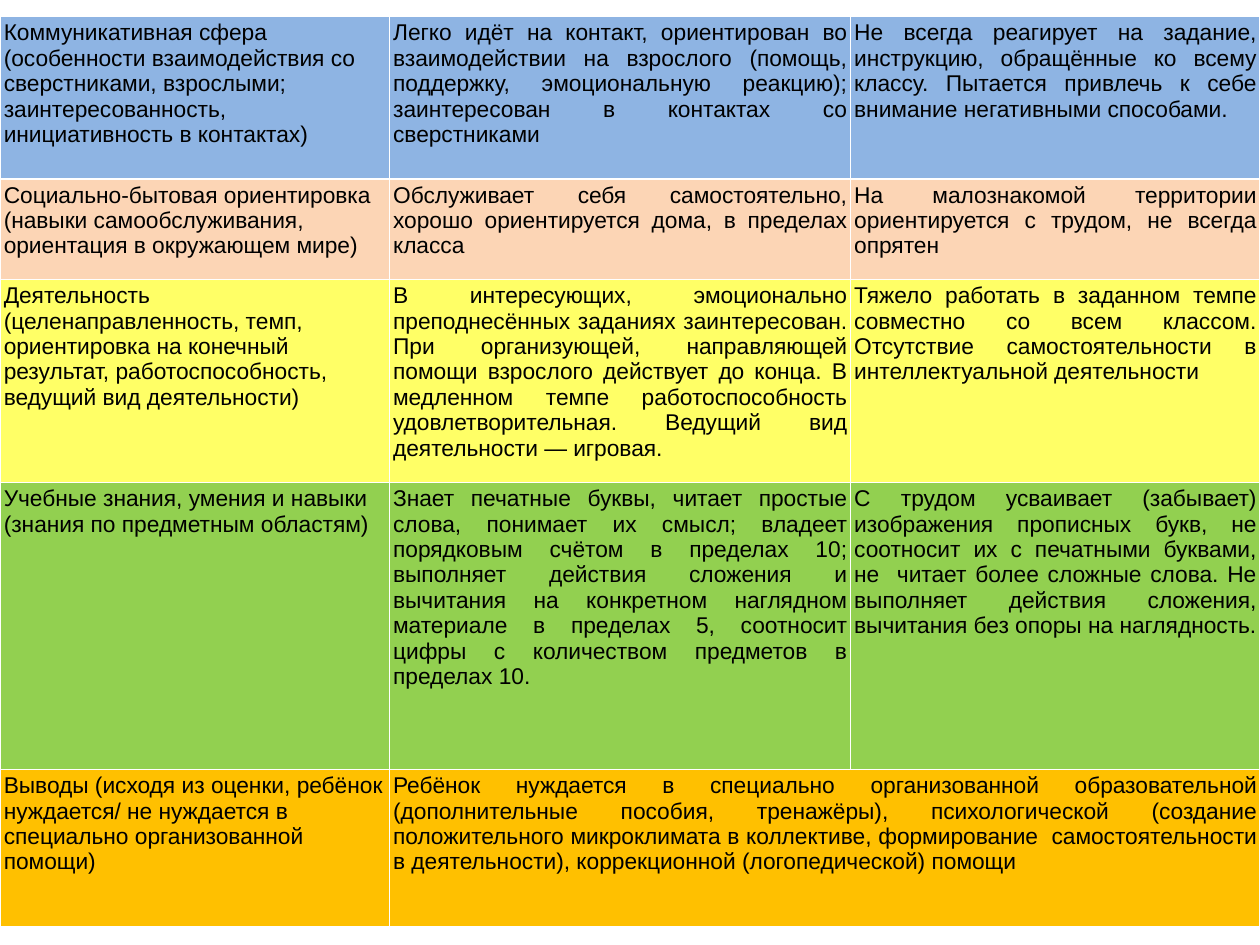
"""Build a slide with a table that assesses a pupil's development by area."""
from dataclasses import dataclass

import lxml.etree
import pptx
import pptx.dml.color
import pptx.enum.text
import pptx.oxml.ns
import pptx.util

Pt = pptx.util.Pt
RGBColor = pptx.dml.color.RGBColor
Align = pptx.enum.text.PP_ALIGN

BLACK = RGBColor(0x00, 0x00, 0x00)
WHITE = RGBColor(0xFF, 0xFF, 0xFF)
BLUE = RGBColor(0x8E, 0xB4, 0xE3)
PEACH = RGBColor(0xFC, 0xD5, 0xB5)
YELLOW = RGBColor(0xFF, 0xFF, 0x66)
GREEN = RGBColor(0x92, 0xD0, 0x50)
ORANGE = RGBColor(0xFF, 0xC0, 0x00)

PAGE_WIDTH, PAGE_HEIGHT = 720, 540
TABLE_TOP = 9.4
COLUMN_WIDTHS = (222.5, 263.5, 234)
CELL_MARGIN = 2.16
FONT_NAME, FONT_SIZE = "Arial", 13
BORDER_WIDTH = 1


@dataclass(frozen=True)
class Area:
    height: float
    fill: RGBColor
    texts: tuple[str, ...]


AREAS = (
    Area(92.8, BLUE, (
        "Коммуникативная сфера (особенности взаимодействия со сверстниками, взрослыми; "
        "заинтересованность, инициативность в контактах)",
        "Легко идёт на контакт, ориентирован во взаимодействии на взрослого (помощь, поддержку, "
        "эмоциональную реакцию); заинтересован в контактах со сверстниками",
        "Не всегда реагирует на задание, инструкцию, обращённые ко всему классу. "
        "Пытается привлечь к себе внимание негативными способами.",
    )),
    Area(57.5, PEACH, (
        "Социально-бытовая ориентировка (навыки самообслуживания, ориентация в окружающем мире)",
        "Обслуживает себя самостоятельно, хорошо ориентируется дома, в пределах класса",
        "На малознакомой территории ориентируется с трудом, не всегда опрятен",
    )),
    Area(116, YELLOW, (
        "Деятельность (целенаправленность, темп, ориентировка на конечный результат, "
        "работоспособность, ведущий вид деятельности)",
        "В интересующих, эмоционально преподнесённых заданиях заинтересован. "
        "При организующей, направляющей помощи взрослого действует до конца. "
        "В медленном темпе работоспособность удовлетворительная. "
        "Ведущий вид деятельности — игровая.",
        "Тяжело работать в заданном темпе совместно со всем классом. "
        "Отсутствие самостоятельности в интеллектуальной деятельности",
    )),
    Area(164, GREEN, (
        "Учебные знания, умения и навыки (знания по предметным областям)",
        "Знает печатные буквы, читает простые слова, понимает их смысл; владеет порядковым счётом "
        "в пределах 10; выполняет действия сложения и вычитания на конкретном наглядном материале "
        "в пределах 5, соотносит цифры с количеством предметов в пределах 10.",
        "С трудом усваивает (забывает) изображения прописных букв, не соотносит их с печатными "
        "буквами, не  читает более сложные слова. Не выполняет действия сложения, "
        "вычитания без опоры на наглядность.",
    )),
    Area(90, ORANGE, (
        "Выводы (исходя из оценки, ребёнок нуждается/ не нуждается в специально "
        "организованной помощи)",
        "Ребёнок нуждается в специально организованной образовательной (дополнительные пособия, "
        "тренажёры), психологической (создание положительного микроклимата в коллективе, "
        "формирование  самостоятельности в деятельности), коррекционной (логопедической) помощи",
    )),
)


def set_borders(cell, color: RGBColor) -> None:
    properties = cell._tc.get_or_add_tcPr()
    for position, side in enumerate(("lnL", "lnR", "lnT", "lnB")):
        line = lxml.etree.Element(pptx.oxml.ns.qn(f"a:{side}"), w=str(Pt(BORDER_WIDTH)))
        fill = lxml.etree.SubElement(line, pptx.oxml.ns.qn("a:solidFill"))
        lxml.etree.SubElement(fill, pptx.oxml.ns.qn("a:srgbClr"), val=str(color))
        properties.insert(position, line)


def style_cell(cell, fill: RGBColor) -> None:
    cell.margin_left = cell.margin_right = Pt(CELL_MARGIN)
    cell.margin_top = cell.margin_bottom = Pt(CELL_MARGIN)
    cell.fill.solid()
    cell.fill.fore_color.rgb = fill
    set_borders(cell, WHITE)


def write_text(cell, text: str, alignment: Align) -> None:
    para = cell.text_frame.paragraphs[0]
    para.alignment = alignment
    span = para.add_run()
    span.text = text
    span.font.name = FONT_NAME
    span.font.size = Pt(FONT_SIZE)
    span.font.bold = False
    span.font.color.rgb = BLACK


def fill_row(table, index: int, area: Area) -> None:
    table.rows[index].height = Pt(area.height)
    last_column = len(COLUMN_WIDTHS) - 1
    for column in range(len(COLUMN_WIDTHS)):
        style_cell(table.cell(index, column), area.fill)
    for column, text in enumerate(area.texts):
        write_text(table.cell(index, column), text, Align.JUSTIFY if column else Align.LEFT)
    last_text = len(area.texts) - 1
    if last_text < last_column:
        table.cell(index, last_text).merge(table.cell(index, last_column))


def add_assessment_table(page) -> None:
    frame = page.shapes.add_table(
        len(AREAS), len(COLUMN_WIDTHS), Pt(0), Pt(TABLE_TOP),
        Pt(sum(COLUMN_WIDTHS)), Pt(sum(area.height for area in AREAS)),
    )
    table = frame.table
    table.first_row = table.horz_banding = False
    for column, width in zip(table.columns, COLUMN_WIDTHS):
        column.width = Pt(width)
    for index, area in enumerate(AREAS):
        fill_row(table, index, area)


def main() -> None:
    deck = pptx.Presentation()
    deck.slide_width, deck.slide_height = Pt(PAGE_WIDTH), Pt(PAGE_HEIGHT)
    page = deck.slides.add_slide(deck.slide_layouts[6])
    add_assessment_table(page)
    deck.save("out.pptx")


if __name__ == "__main__":
    main()
